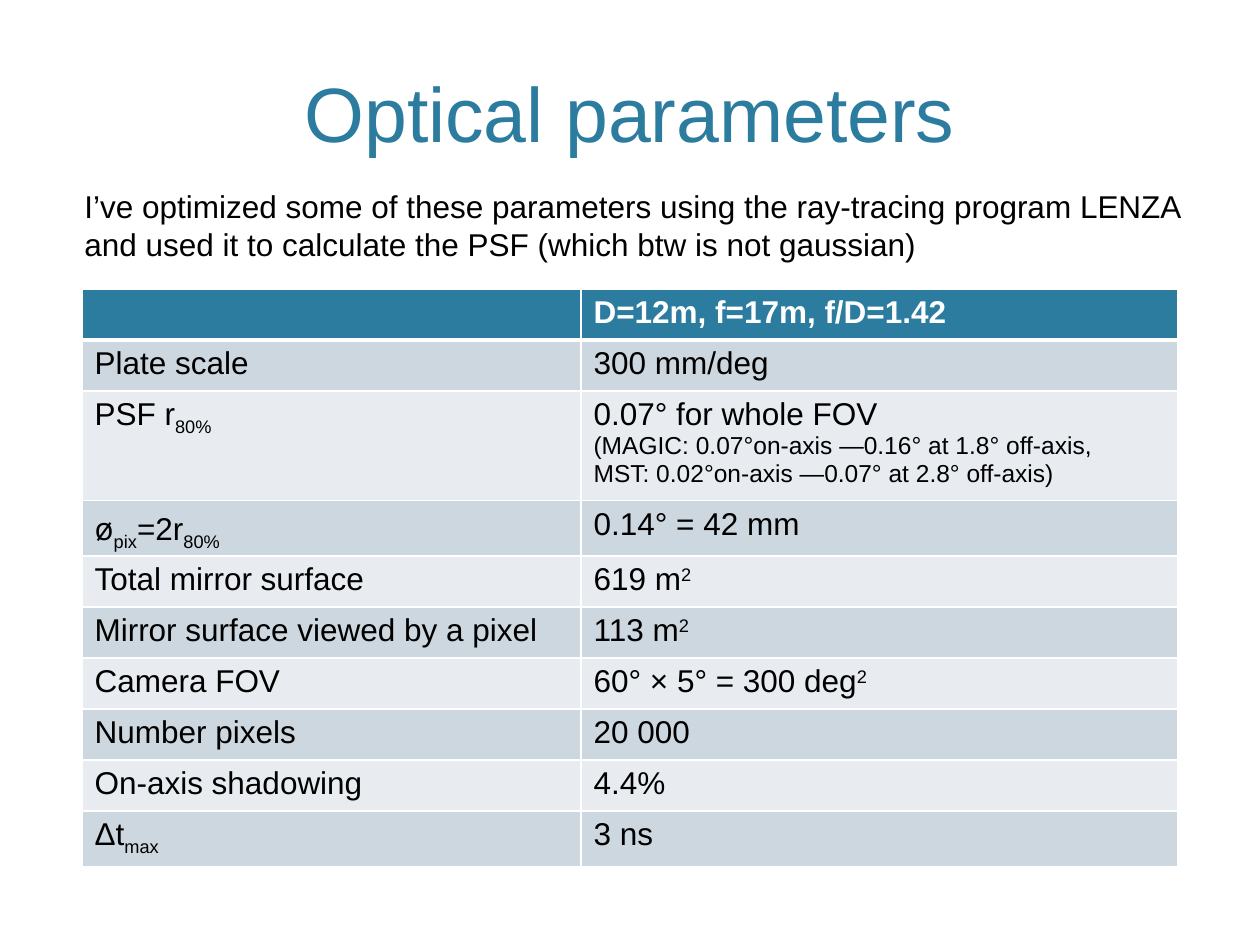
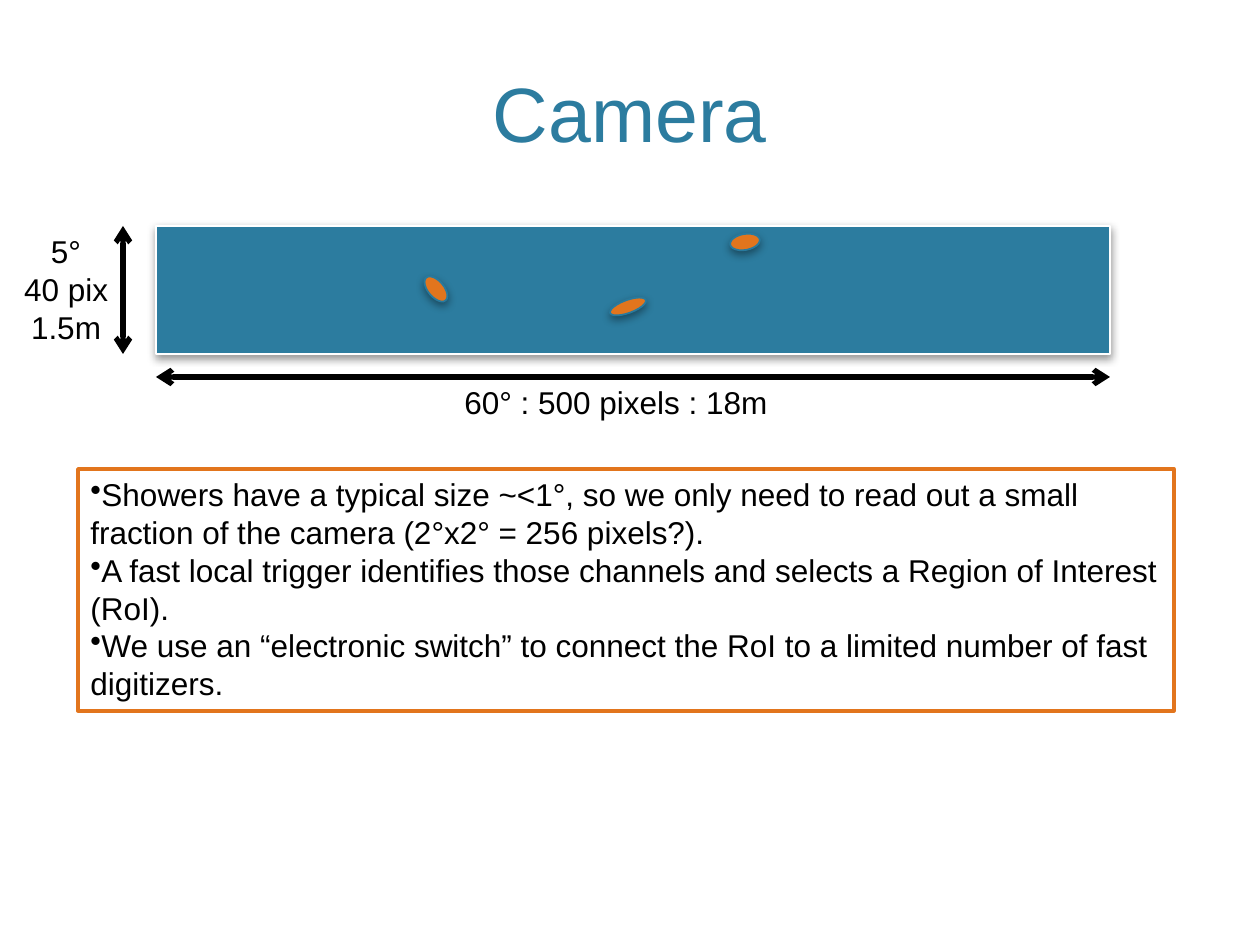
from lxml.etree import SubElement
from pptx import Presentation
from pptx.dml.color import RGBColor
from pptx.enum.shapes import MSO_CONNECTOR as LineKind, MSO_SHAPE as Preset
from pptx.enum.text import MSO_ANCHOR as Anchor, PP_ALIGN as Align
from pptx.oxml.ns import qn
from pptx.util import Pt

PX = 914400 / 126
SLIDE_W, SLIDE_H = 1260, 945

TEAL = RGBColor(0x2C, 0x7C, 0x9F)
SPOT_EDGE = RGBColor(0x28, 0x7A, 0x9E)
ORANGE = RGBColor(0xE2, 0x75, 0x1D)
BLACK = RGBColor(0, 0, 0)
WHITE = RGBColor(0xFF, 0xFF, 0xFF)
BAND_DARK = RGBColor(0xCD, 0xD7, 0xDF)
BAND_LIGHT = RGBColor(0xE8, 0xEC, 0xF0)

FONT, SYMBOL_FONT = "Arial", "Open Sans"
BODY, SMALL, TITLE = 18, 14, 44
SUB, SUP = -25000, 30000

# Each cell is a list of paragraphs, each paragraph a list of runs
PARAMETERS = [
    ([["Plate scale"]], [["300 mm/deg"]]),
    ([["PSF r", ("80%", {"baseline": SUB})]],
     [["0.07° for whole FOV"],
      [("(MAGIC: 0.07°on-axis —0.16° at 1.8° off-axis,", {"size": SMALL})],
      [("MST: 0.02°on-axis —0.07° at 2.8° off-axis)", {"size": SMALL})]]),
    ([[("ø", {"font": SYMBOL_FONT}), ("pix", {"baseline": SUB}),
       "=2r", ("80%", {"baseline": SUB})]],
     [["0.14° = 42 mm"]]),
    ([["Total mirror surface"]], [["619 m", ("2", {"baseline": SUP})]]),
    ([["Mirror surface viewed by a pixel"]],
     [["113 m", ("2", {"baseline": SUP})]]),
    ([["Camera FOV"]], [["60° × 5° = 300 deg", ("2", {"baseline": SUP})]]),
    ([["Number pixels"]], [["20 000"]]),
    ([["On-axis shadowing"]], [["4.4%"]]),
    ([["Δt", ("max", {"baseline": SUB})]], [["3 ns"]]),
]

READOUT_POINTS = [
    "Showers have a typical size ~<1°, so we only need to read out a small "
    "fraction of the camera (2°x2° = 256 pixels?).",
    "A fast local trigger identifies those channels and selects a Region of "
    "Interest (RoI).",
    "We use an “electronic switch” to connect the RoI to a limited number of "
    "fast digitizers.",
]

# left, top, width, height, rotation
SHOWERS = [(609, 300, 38, 13, 340), (421, 281, 30, 16, 230),
           (730, 234, 30, 16, 350)]


def px(*lengths):
    return [round(length * PX) for length in lengths]


# Text
def add_run(paragraph, text, size=BODY, color=BLACK, font=FONT, bold=False,
            baseline=None):
    run = paragraph.add_run()
    run.text = text
    run.font.size = Pt(size)
    run.font.name = font
    run.font.bold = bold
    run.font.color.rgb = color
    if baseline:
        run._r.get_or_add_rPr().set("baseline", str(baseline))


def write(frame, paragraphs, align=Align.LEFT, bullet=None, **style):
    for index, runs in enumerate(paragraphs):
        paragraph = frame.paragraphs[0] if index == 0 else frame.add_paragraph()
        paragraph.alignment = align
        if bullet:
            SubElement(paragraph._p.get_or_add_pPr(), qn("a:buChar"), char=bullet)
        for run in runs:
            text, own_style = (run, {}) if isinstance(run, str) else run
            add_run(paragraph, text, **{**style, **own_style})


def add_label(slide, box, paragraphs, wrap=True, anchor=Anchor.TOP, **style):
    frame = slide.shapes.add_textbox(*px(*box)).text_frame
    frame.word_wrap = wrap
    frame.vertical_anchor = anchor
    write(frame, paragraphs, **style)


def add_titled_slide(deck, title):
    slide = deck.slides.add_slide(deck.slide_layouts[6])
    add_label(slide, (0, 101, SLIDE_W, 63), [[title]], anchor=Anchor.BOTTOM,
              align=Align.CENTER, size=TITLE, color=TEAL)
    return slide


# Shapes and lines
def add_figure(slide, preset, box, fill, edge, edge_width=1, rotation=0):
    figure = slide.shapes.add_shape(preset, *px(*box))
    figure.shadow.inherit = False
    figure.fill.solid()
    figure.fill.fore_color.rgb = fill
    figure.line.color.rgb = edge
    figure.line.width = Pt(edge_width)
    figure.rotation = rotation
    return figure


def cast_shadow(figure):
    effects = figure._element.spPr.find(qn("a:effectLst"))
    shadow = SubElement(effects, qn("a:outerShdw"), blurRad=str(Pt(5)),
                        dist=str(Pt(2)), dir="5400000", rotWithShape="0")
    color = SubElement(shadow, qn("a:srgbClr"), val=str(BLACK))
    SubElement(color, qn("a:alpha"), val="40000")


def add_dimension(slide, x1, y1, x2, y2):
    dimension = slide.shapes.add_connector(LineKind.STRAIGHT, *px(x1, y1, x2, y2))
    dimension.line.color.rgb = BLACK
    dimension.line.width = Pt(3)
    line = dimension.line._get_or_add_ln()
    for end in ("a:headEnd", "a:tailEnd"):
        SubElement(line, qn(end), type="arrow")
    SubElement(dimension._element.spPr, qn("a:effectLst"))


# Table
def style_cell(cell, fill, top=1, bottom=1):
    properties = cell._tc.get_or_add_tcPr()
    for side, width in (("L", 1), ("R", 1), ("T", top), ("B", bottom)):
        border = SubElement(properties, qn(f"a:ln{side}"), w=str(Pt(width)))
        solid = SubElement(border, qn("a:solidFill"))
        SubElement(solid, qn("a:srgbClr"), val=str(WHITE))
    cell.fill.solid()
    cell.fill.fore_color.rgb = fill


def add_parameter_table(slide, left, top, columns, row_height, header, rows):
    row_count = len(rows) + 1
    table = slide.shapes.add_table(
        row_count, len(columns),
        *px(left, top, sum(columns), row_height * row_count)).table
    for column, width in zip(table.columns, px(*columns)):
        column.width = width
    for row in table.rows:
        row.height = px(row_height)[0]

    for cell in table.rows[0].cells:
        style_cell(cell, TEAL, bottom=3)
    write(table.cell(0, 1).text_frame, [[header]], color=WHITE, bold=True)

    for number, contents in enumerate(rows, start=1):
        band = BAND_DARK if number % 2 else BAND_LIGHT
        for column, paragraphs in enumerate(contents):
            cell = table.cell(number, column)
            style_cell(cell, band, top=3 if number == 1 else 1)
            write(cell.text_frame, paragraphs)


# Slides
def build_optics(deck):
    slide = add_titled_slide(deck, "Optical parameters")
    add_parameter_table(slide, 82, 289, (499, 597), 51,
                        "D=12m, f=17m, f/D=1.42", PARAMETERS)
    add_label(slide, (72, 181, 1125, 89), [[
        "I’ve optimized some of these parameters using the ray-tracing program "
        "LENZA and used it to calculate the PSF (which btw is not gaussian)"]])


def build_camera(deck):
    slide = add_titled_slide(deck, "Camera")
    left, top, width, height = camera = (156, 226, 954, 128)

    # Camera dimensions
    add_dimension(slide, left, 377, left + width, 377)
    add_label(slide, (452, 377, 363, 50), [["60° : 500 pixels : 18m"]], wrap=False)
    add_dimension(slide, 123, top, 123, top + height)
    add_label(slide, (6, top, 120, 127), [["5°"], ["40 pix"], ["1.5m"]],
              wrap=False, align=Align.CENTER)

    # Camera face with shower images
    cast_shadow(add_figure(slide, Preset.RECTANGLE, camera, TEAL, WHITE))
    for *box, rotation in SHOWERS:
        cast_shadow(add_figure(slide, Preset.OVAL, box, ORANGE, SPOT_EDGE,
                               rotation=rotation))

    # Readout notes
    notes = add_figure(slide, Preset.RECTANGLE, (78, 469, 1096, 242),
                       WHITE, ORANGE, edge_width=2).text_frame
    notes.word_wrap = True
    notes.vertical_anchor = Anchor.TOP
    write(notes, [[point] for point in READOUT_POINTS], bullet="•")


def main():
    deck = Presentation()
    deck.slide_width, deck.slide_height = px(SLIDE_W, SLIDE_H)
    build_optics(deck)
    build_camera(deck)
    deck.save("out.pptx")


if __name__ == "__main__":
    main()
